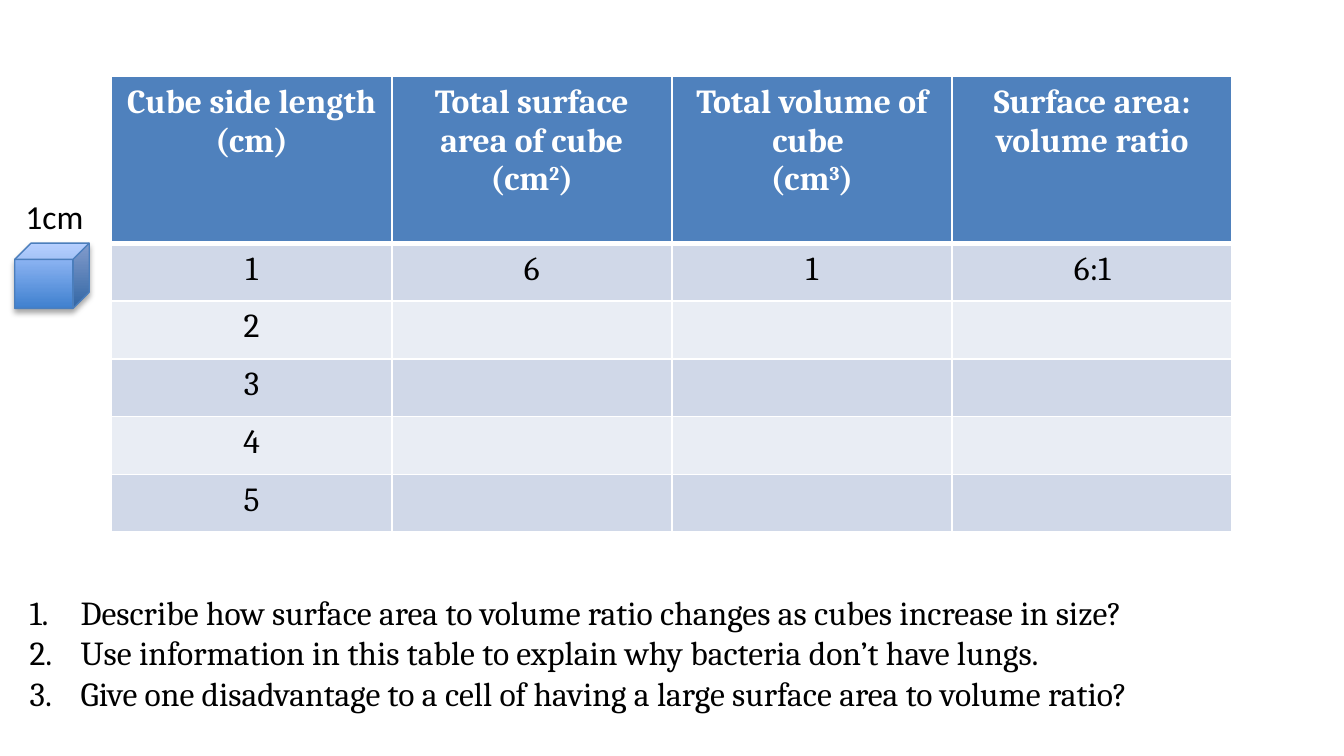
from lxml import etree
from pptx import Presentation
from pptx import util as u
from pptx.dml.color import RGBColor
from pptx.enum import shapes, text
from pptx.oxml import ns

WIDTH = 10
HEIGHT = WIDTH * 9 / 16
COLOURS = {
    "header": "4F81BD", "band": "D0D8E8", "plain": "E9EDF4",
    "white": "FFFFFF", "black": "000000",
    "cube dark": "3F80CE", "cube light": "A4C4FF", "cube edge": "4B7EBC",
}
# Every part's box as shares of the slide: left, top, width, height
BOXES = {
    "table": (0.083, 0.101, 0.834, 0.603),
    "questions": (0.012, 0.774, 0.976, 0.18),
    "cube": (0.009, 0.251, 0.066, 0.157),
}
HEADINGS = [
    ["Cube side length", "(cm)"],
    ["Total surface area of cube", "(cm^2^)"],
    ["Total volume of cube ", "(cm^3^)"],
    ["Surface area: volume ratio"],
]
ROWS = [["1", "6", "1", "6:1"]] + [[str(side), "", "", ""] for side in range(2, 6)]
QUESTIONS = [
    "Describe how surface area to volume ratio changes as cubes increase in size?",
    "Use information in this table to explain why bacteria don’t have lungs.",
    "Give one disadvantage to a cell of having a large surface area to volume ratio?",
]


def colour(name):
    return RGBColor.from_string(COLOURS[name])


def place(box):
    left, top, width, height = box
    return [u.Inches(size) for size in
            (left * WIDTH, top * HEIGHT, width * WIDTH, height * HEIGHT)]


def add_xml(parent, tag, **attributes):
    return etree.SubElement(parent, ns.qn(tag), attributes)


def format_runs(para, font="Cambria", tint="black", bold=False):
    for span in para.runs:
        span.font.name, span.font.size, span.font.bold = font, u.Pt(18), bold
        span.font.color.rgb = colour(tint)


def write_line(para, line):
    """Text between ^ marks becomes superscript."""
    for index, part in enumerate(line.split("^")):
        span = para.add_run()
        span.text = part
        if index % 2:
            span.font._element.set("baseline", "30000")


def border_cell(cell, top_width, bottom_width):
    properties = cell._tc.get_or_add_tcPr()
    for side, width in zip("LRTB", (1, 1, top_width, bottom_width)):
        line = add_xml(properties, f"a:ln{side}", w=str(u.Pt(width)))
        add_xml(add_xml(line, "a:solidFill"), "a:srgbClr", val=COLOURS["white"])


def fill_cell(cell, lines, fill, tint="black", bold=False, top_width=1, bottom_width=1):
    border_cell(cell, top_width, bottom_width)
    cell.fill.solid()
    cell.fill.fore_color.rgb = colour(fill)
    frame = cell.text_frame
    for index, line in enumerate(lines):
        para = frame.add_paragraph() if index else frame.paragraphs[0]
        para.alignment = text.PP_ALIGN.CENTER
        if line:
            write_line(para, line)
        format_runs(para, tint=tint, bold=bold)


def add_cube_table(page, box):
    left, top, width, height = place(box)
    table = page.shapes.add_table(len(ROWS) + 1, len(HEADINGS),
                                  left, top, width, height).table
    row_height = u.Inches(0.43)
    for row in table.rows:
        row.height = row_height
    table.rows[0].height = height - len(ROWS) * row_height
    for column in table.columns:
        column.width = width // len(HEADINGS)
    for column, lines in enumerate(HEADINGS):
        fill_cell(table.cell(0, column), lines, "header", "white", True, bottom_width=3)
    for number, values in enumerate(ROWS, 1):
        # The first row shares the thick rule under the header
        for column, value in enumerate(values):
            fill_cell(table.cell(number, column), [value],
                      "band" if number % 2 else "plain",
                      top_width=3 if number == 1 else 1)


def add_questions(page, box):
    body = page.placeholders[1]
    body.left, body.top, body.width, body.height = place(box)
    frame = body.text_frame
    frame.text = "\n".join(QUESTIONS)
    frame.word_wrap = True
    frame.auto_size = text.MSO_AUTO_SIZE.SHAPE_TO_FIT_TEXT
    indent = u.Inches(0.38)
    for para in frame.paragraphs:
        para.space_before = u.Pt(0)
        format_runs(para)
        properties = para._p.get_or_add_pPr()
        properties.set("marL", str(indent))
        properties.set("indent", str(-indent))
        add_xml(properties, "a:buFont", typeface="+mj-lt")
        add_xml(properties, "a:buAutoNum", type="arabicPeriod")


def add_labelled_cube(page, box):
    left, top, width, height = place(box)
    # Cube
    cube = page.shapes.add_shape(
        shapes.MSO_SHAPE.CUBE, left + int(width * 0.03), top + int(height * 0.45),
        int(width * 0.84), int(height * 0.55))
    cube.fill.gradient()
    cube.fill.gradient_angle = 90
    stops = zip(cube.fill.gradient_stops, ("cube dark", "cube light"), (0, 1))
    for stop, name, position in stops:
        stop.color.rgb, stop.position = colour(name), position
    cube.line.color.rgb, cube.line.width = colour("cube edge"), u.Pt(0.75)
    # Soft shadow below the cube
    cube.shadow.inherit = False
    effects = cube._element.spPr.find(ns.qn("a:effectLst"))
    shadow = add_xml(effects, "a:outerShdw", blurRad=str(u.Pt(3.1)),
                     dist=str(u.Pt(1.8)), dir="5400000", rotWithShape="0")
    tint = add_xml(shadow, "a:srgbClr", val=COLOURS["black"])
    add_xml(tint, "a:alpha", val="35000")
    # Side length above it
    label = page.shapes.add_textbox(left, top, width, int(height * 0.455))
    frame = label.text_frame
    frame.text = "1cm"
    frame.word_wrap = True
    frame.auto_size = text.MSO_AUTO_SIZE.SHAPE_TO_FIT_TEXT
    format_runs(frame.paragraphs[0], "Calibri")


def main():
    deck = Presentation()
    deck.slide_width, deck.slide_height = u.Inches(WIDTH), u.Inches(HEIGHT)
    page = deck.slides.add_slide(deck.slide_layouts[1])
    title = page.shapes.title._element
    title.getparent().remove(title)
    add_cube_table(page, BOXES["table"])
    add_questions(page, BOXES["questions"])
    add_labelled_cube(page, BOXES["cube"])
    deck.save("out.pptx")


if __name__ == "__main__":
    main()
